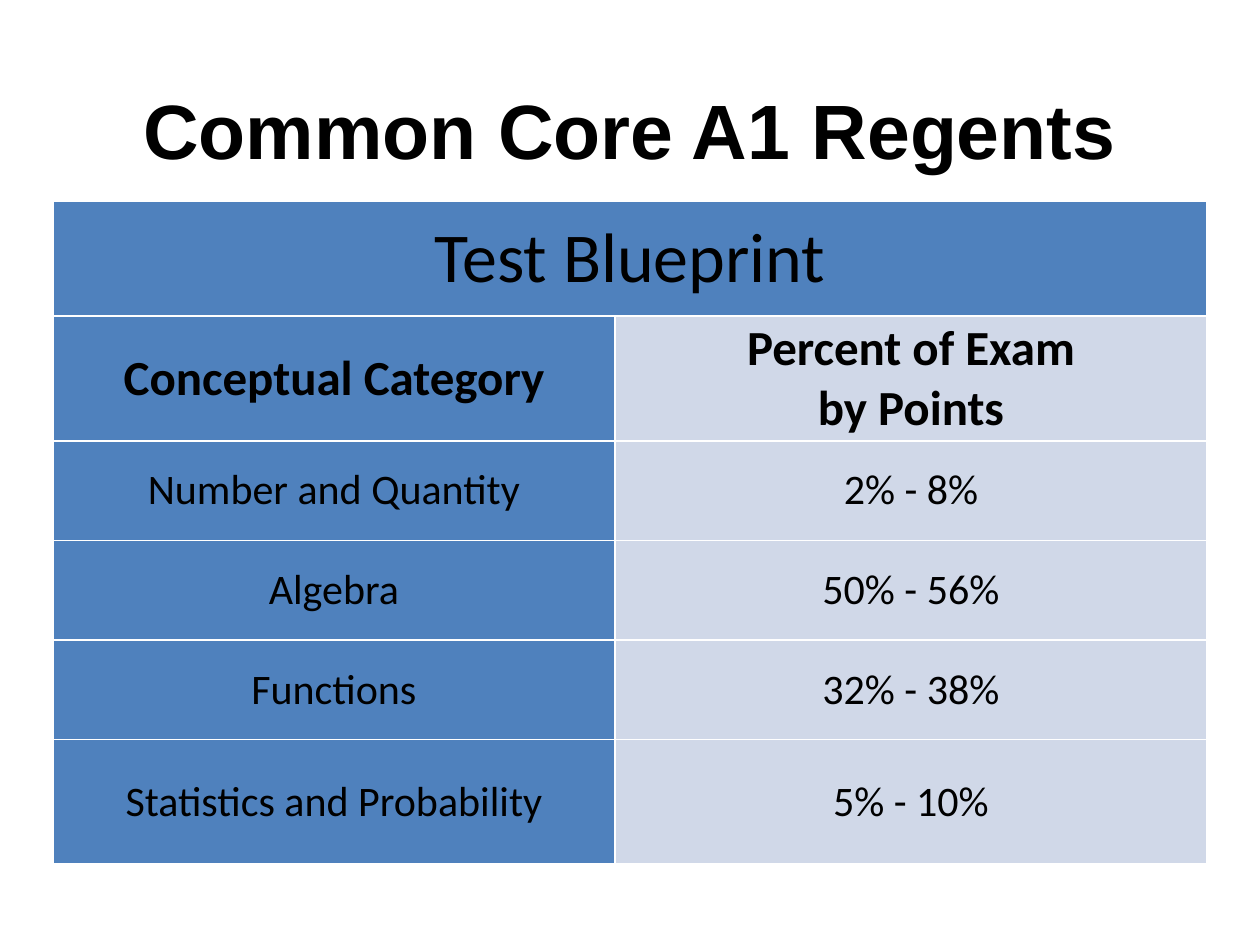
from lxml import etree
from pptx import Presentation
from pptx.dml.color import RGBColor
from pptx.enum import text
from pptx.oxml import ns
from pptx.util import Inches, Pt

BLUE, PALE, BLACK, WHITE = "4F81BD", "D0D8E8", "000000", "FFFFFF"
COLUMN_WIDTHS = [4.46, 4.7]
ROW_HEIGHTS = [0.91, 0.99, 0.79, 0.79, 0.79, 0.99]
HEADINGS = ["Conceptual Category", "Percent of Exam\nby Points"]
CATEGORIES = [
    ("Number and Quantity", "2% - 8%"),
    ("Algebra", "50% - 56%"),
    ("Functions", "32% - 38%"),
    ("Statistics and Probability", "5% - 10%"),
]


def color(value):
    return RGBColor.from_string(value)


def write(frame, content, size, font, bold=False):
    frame.word_wrap = True
    for index, line in enumerate(content.split("\n")):
        para = frame.add_paragraph() if index else frame.paragraphs[0]
        para.alignment = text.PP_ALIGN.CENTER
        span = para.add_run()
        span.text = line
        span.font.size = Pt(size)
        span.font.name = font
        span.font.bold = bold
        span.font.color.rgb = color(BLACK)


def add_title(page, content):
    title = page.shapes.title
    title.left, title.top = Inches(0.5), Inches(0.4)
    title.width, title.height = Inches(9), Inches(1.25)
    title.text_frame.vertical_anchor = text.MSO_ANCHOR.MIDDLE
    write(title.text_frame, content, 44, "Arial", True)


def add_borders(cell):
    properties = cell._tc.get_or_add_tcPr()
    for side in ("a:lnL", "a:lnR", "a:lnT", "a:lnB"):
        line = etree.SubElement(properties, ns.qn(side), w=str(Pt(1)))
        fill = etree.SubElement(line, ns.qn("a:solidFill"))
        etree.SubElement(fill, ns.qn("a:srgbClr"), val=WHITE)


def format_cell(cell, fill):
    add_borders(cell)
    cell.fill.solid()
    cell.fill.fore_color.rgb = color(fill)
    cell.vertical_anchor = text.MSO_ANCHOR.MIDDLE
    cell.margin_left = cell.margin_right = Inches(0.07)
    cell.margin_top = cell.margin_bottom = 0


def add_blueprint(page):
    frame = page.shapes.add_table(
        len(ROW_HEIGHTS), len(COLUMN_WIDTHS), Inches(0.42), Inches(1.6),
        Inches(sum(COLUMN_WIDTHS)), Inches(sum(ROW_HEIGHTS)))
    table = frame.table
    for column, width in zip(table.columns, COLUMN_WIDTHS):
        column.width = Inches(width)
    for row, height in zip(table.rows, ROW_HEIGHTS):
        row.height = Inches(height)
        for cell, fill in zip(row.cells, (BLUE, PALE)):
            format_cell(cell, fill)

    header = table.cell(0, 0)
    header.merge(table.cell(0, 1))
    write(header.text_frame, "Test Blueprint", 40, "Calibri")
    for row, values in enumerate([HEADINGS, *CATEGORIES], start=1):
        heading = row == 1
        for column, value in enumerate(values):
            write(table.cell(row, column).text_frame, value,
                  28 if heading else 24, "Calibri", heading)


def main():
    deck = Presentation()
    deck.slide_width, deck.slide_height = Inches(10), Inches(7.5)
    page = deck.slides.add_slide(deck.slide_layouts[5])
    add_title(page, "Common Core A1 Regents")
    add_blueprint(page)
    deck.save("out.pptx")


if __name__ == "__main__":
    main()
